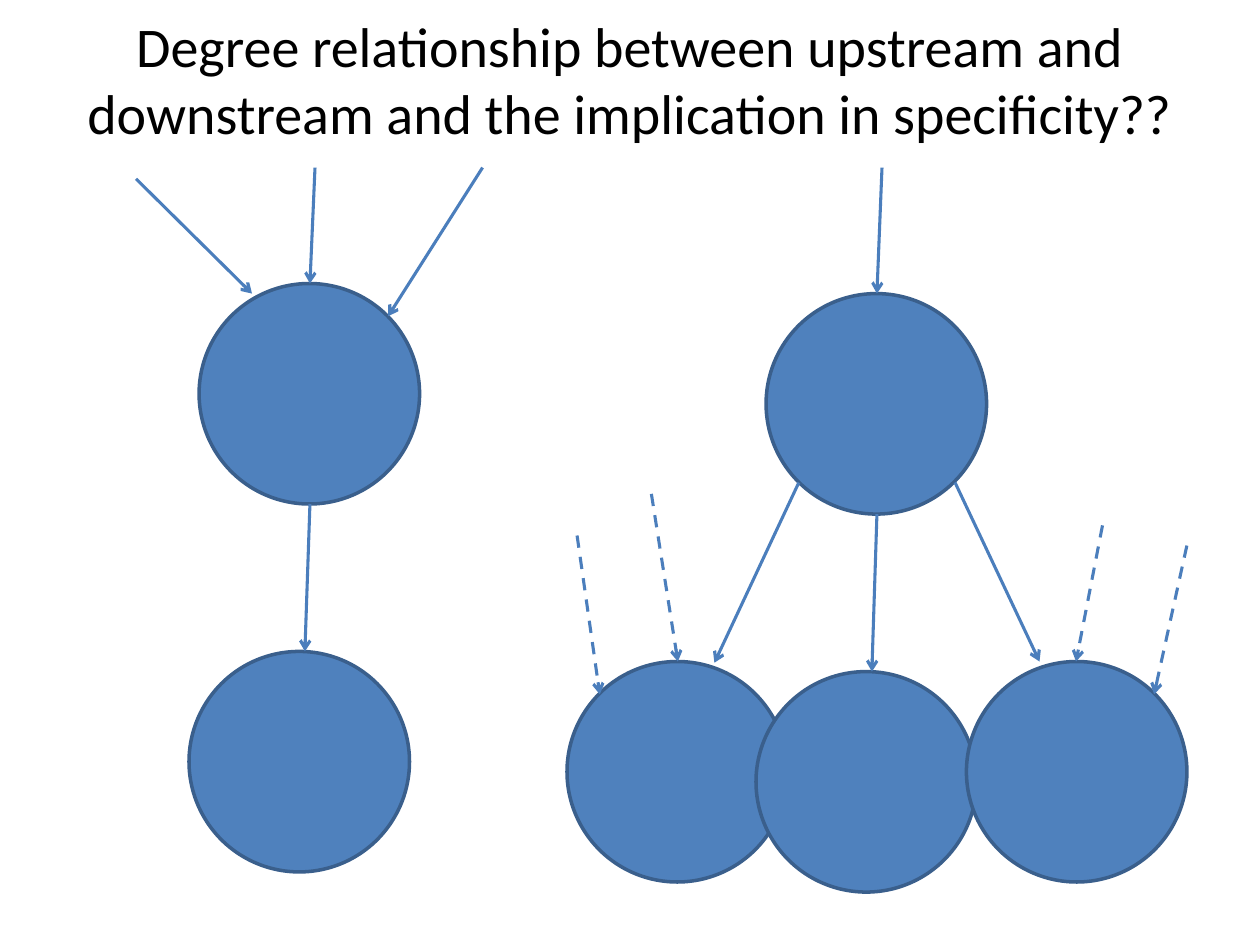
from lxml.etree import SubElement
from pptx import Presentation
from pptx.dml.color import RGBColor
from pptx.enum.dml import MSO_LINE
from pptx.enum.shapes import MSO_CONNECTOR, MSO_SHAPE
from pptx.enum.text import MSO_ANCHOR, PP_ALIGN
from pptx.oxml.ns import qn
from pptx.util import Inches, Pt

NODE_FILL = RGBColor(0x4F, 0x81, 0xBD)
NODE_LINE = RGBColor(0x3A, 0x5F, 0x8C)
ARROW_COLOR = RGBColor(0x4B, 0x7E, 0xBC)
BLACK = RGBColor(0, 0, 0)
DIAMETER = Inches(1.75)

NODES = [  # left, top; later nodes overlap earlier ones
    (1.58, 2.25), (1.5, 5.17),
    (6.08, 2.33), (4.5, 5.25), (6, 5.33), (7.67, 5.25),
]
SOLID_ARROWS = [  # start x, start y, end x, end y
    (1.08, 1.42, 2, 2.33), (2.5, 1.33, 2.46, 2.25), (3.83, 1.33, 3.08, 2.51),
    (2.46, 4, 2.42, 5.17),
    (7, 1.33, 6.96, 2.33),
    (6.34, 3.83, 5.67, 5.26), (6.96, 4.08, 6.92, 5.33), (7.58, 3.83, 8.25, 5.25),
]
DASHED_ARROWS = [
    (4.58, 4.25, 4.76, 5.51), (5.17, 3.92, 5.38, 5.25),
    (8.75, 4.17, 8.54, 5.25), (9.42, 4.33, 9.16, 5.51),
]

presentation = Presentation()
presentation.slide_width = Inches(10)
presentation.slide_height = Inches(7.5)
slide = presentation.slides.add_slide(presentation.slide_layouts[5])

title = slide.shapes.title
title.left, title.top = Inches(0.5), Inches(0)
title.width, title.height = Inches(9), Inches(1.25)
title.text_frame.text = (
    "Degree relationship between upstream and downstream "
    "and the implication in specificity??"
)
title.text_frame.vertical_anchor = MSO_ANCHOR.MIDDLE
paragraph = title.text_frame.paragraphs[0]
paragraph.alignment = PP_ALIGN.CENTER
paragraph.font.name = "Calibri"
paragraph.font.size = Pt(32)
paragraph.font.color.rgb = BLACK

for left, top in NODES:
    node = slide.shapes.add_shape(
        MSO_SHAPE.OVAL, Inches(left), Inches(top), DIAMETER, DIAMETER
    )
    node.shadow.inherit = False
    node.fill.solid()
    node.fill.fore_color.rgb = NODE_FILL
    node.line.color.rgb = NODE_LINE
    node.line.width = Pt(2)

for arrows, dash in ((SOLID_ARROWS, MSO_LINE.SOLID), (DASHED_ARROWS, MSO_LINE.DASH)):
    for ends in arrows:
        arrow = slide.shapes.add_connector(
            MSO_CONNECTOR.STRAIGHT, *(Inches(value) for value in ends)
        )
        arrow.line.color.rgb = ARROW_COLOR
        arrow.line.width = Pt(1.75)
        arrow.line.dash_style = dash
        properties = arrow.element.spPr
        SubElement(properties.find(qn("a:ln")), qn("a:tailEnd"), type="arrow")
        SubElement(properties, qn("a:effectLst"))

presentation.save("out.pptx")
